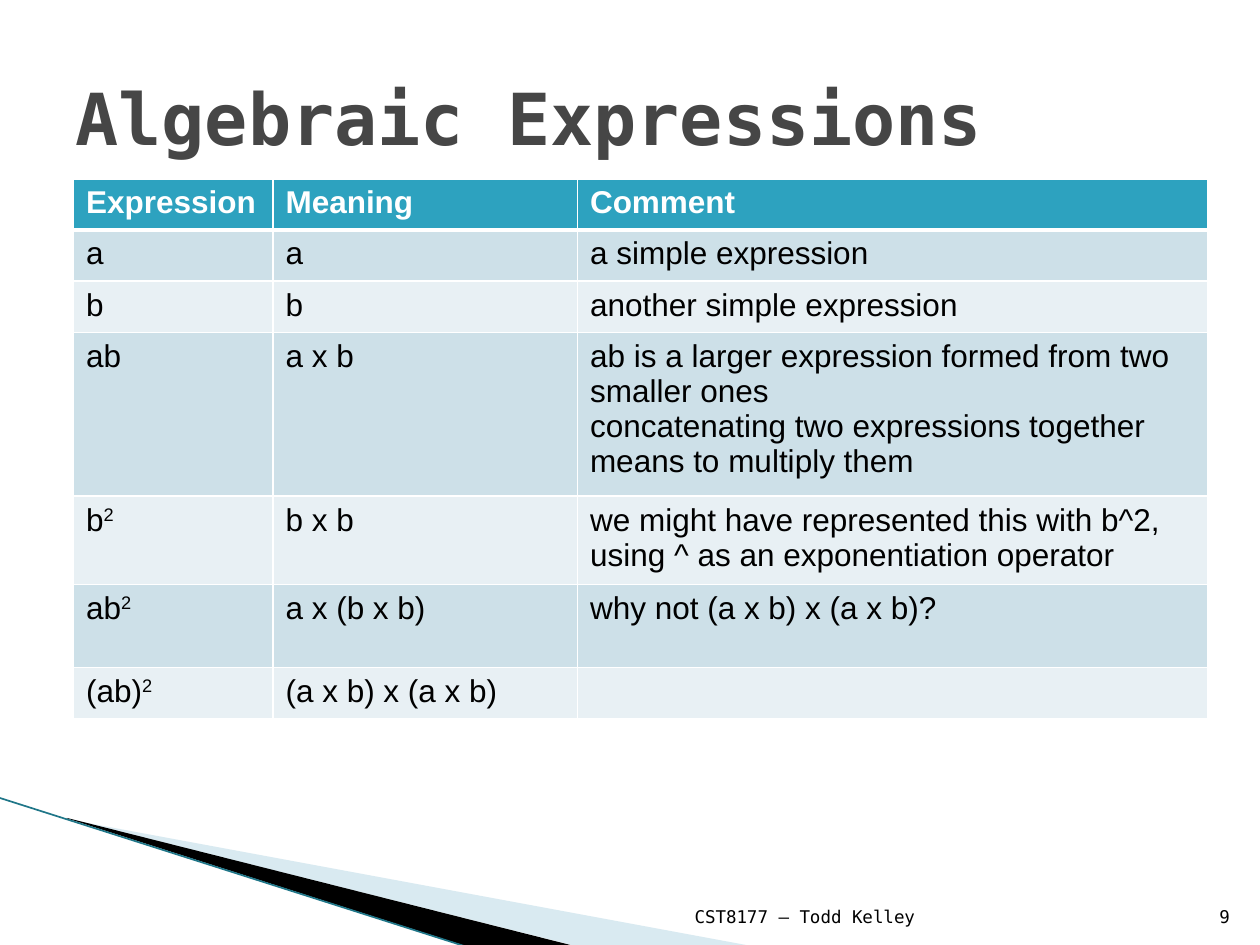
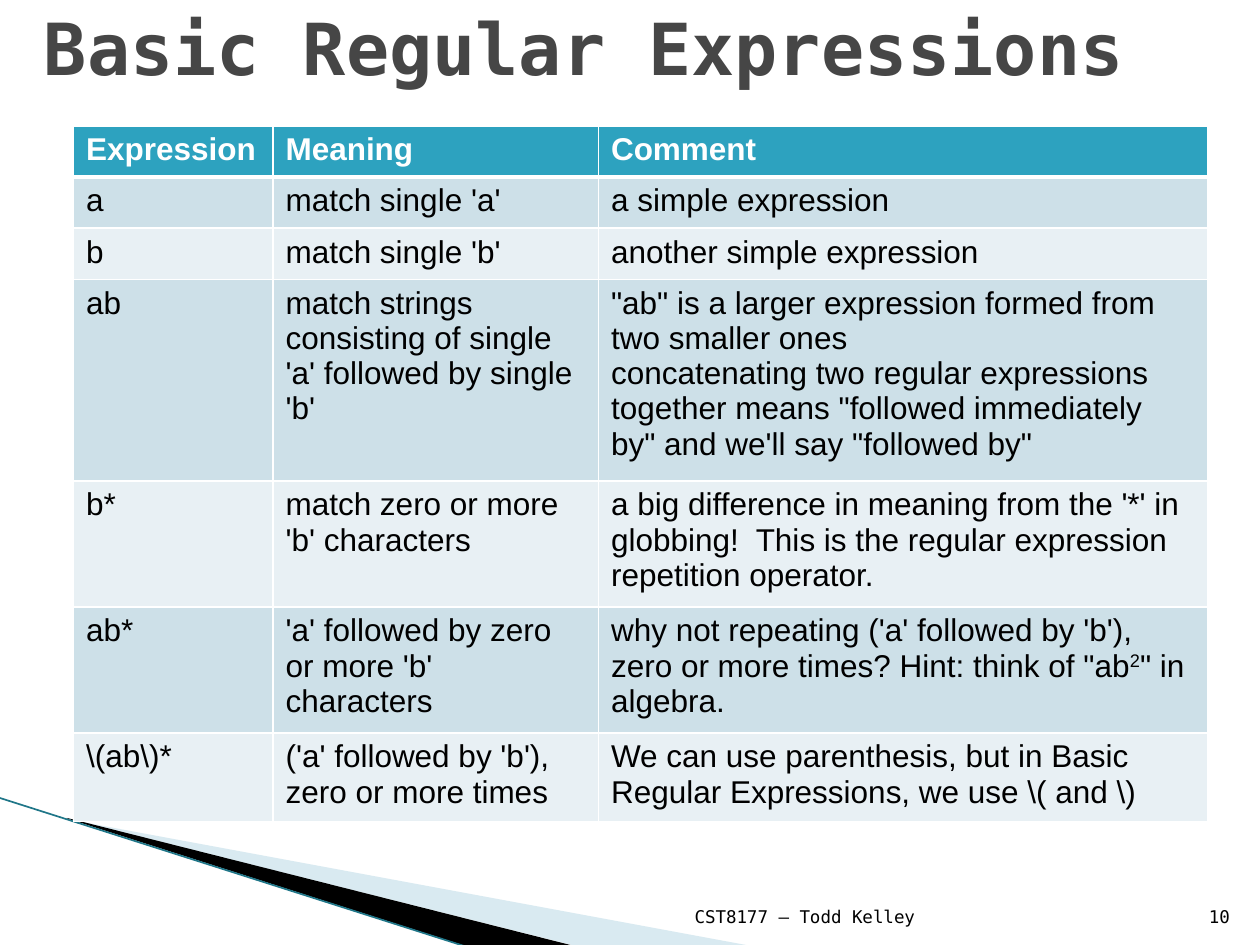
from pptx import Presentation
from pptx.dml.color import RGBColor
from pptx.enum.shapes import MSO_CONNECTOR
from pptx.enum.text import MSO_ANCHOR, PP_ALIGN
from pptx.oxml.ns import qn
from pptx.util import Pt
from lxml.etree import SubElement

MONO, SANS = "DejaVu Sans Mono", "Arial"
WHITE, BLACK, GREY = "FFFFFF", "000000", "464646"
TEAL, BANDS = "2DA2BF", ("CDE0E8", "E8F0F4")
SKY, EDGE = "A0CBDC", "1F7688"
WEDGE = [(39.6, 468.4), (428.4, 540.4), (328.4, 540.4), (39.6, 468)]
SHADE = [(38.2, 467.4), (329, 540.8), (268, 541.2), (38.6, 467.8)]
HEAD = ["Expression", "Meaning", "Comment"]

ALGEBRA = [
    (1, "a", "a", "a simple expression"),
    (1, "b", "b", "another simple expression"),
    (4, "ab", "a x b", "ab is a larger expression formed from two smaller ones\n"
     "concatenating two expressions together means to multiply them"),
    (2, "b~2~", "b x b", "we might have represented this with b^2, "
     "using ^ as an exponentiation operator"),
    (2, "ab~2~", "a x (b x b)", "why not (a x b) x (a x b)?"),
    (1, "(ab)~2~", "(a x b) x (a x b)", ""),
]
REGEX = [
    (1, "a", "match single 'a'", "a simple expression"),
    (1, "b", "match single 'b'", "another simple expression"),
    (5, "ab", "match strings consisting of single 'a' followed by single 'b'",
     "\"ab\" is a larger expression formed from two smaller ones\n"
     "concatenating two regular expressions together means "
     "\"followed immediately by\" and we'll say \"followed by\""),
    (3, "b*", "match zero or more 'b' characters",
     "a big difference in meaning from the '*' in globbing!  "
     "This is the regular expression repetition operator."),
    (3, "ab*", "'a' followed by zero or more 'b' characters",
     "why not repeating ('a' followed by 'b'), zero or more times? "
     "Hint: think of \"ab~2~\" in algebra."),
    (2, r"\(ab\)*", "('a' followed by 'b'), zero or more times",
     r"We can use parenthesis, but in Basic Regular Expressions, we use \( and \)"),
]


def tint(code):
    """Turn a hex string into a colour."""
    return RGBColor.from_string(code)


class Deck:
    """Hold the deck style and the current slide."""

    def __init__(self):
        """Start an empty deck of 10 by 7.5 inches."""
        self.prs = Presentation()
        self.prs.slide_width, self.prs.slide_height = Pt(720), Pt(540)

    def page(self, num):
        """Add a slide with its corner wedge and footer."""
        self.slide = self.prs.slides.add_slide(self.prs.slide_layouts[6])
        self.shapes = self.slide.shapes
        self.free(WEDGE, SKY, 40)
        self.free(SHADE, BLACK)
        self.line((-0.7, 455.8), (267.8, 541.4), EDGE, 0.95)
        self.foot("CST8177 – Todd Kelley", 344.9, 185)
        self.foot(str(num), 681.1, 28.8)

    def free(self, dots, code, alpha=100):
        """Draw a filled outline through the given points."""
        (left, top), *rest = [(Pt(x), Pt(y)) for x, y in dots]
        form = self.shapes.build_freeform(left, top)
        form.add_line_segments(rest)
        shape = form.convert_to_shape()
        shape.shadow.inherit = False
        shape.fill.solid()
        shape.fill.fore_color.rgb = tint(code)
        shape.line.fill.background()
        if alpha < 100:
            hue = shape._element.spPr.find(".//" + qn("a:srgbClr"))
            SubElement(hue, qn("a:alpha")).set("val", str(alpha * 1000))

    def line(self, start, end, code, width):
        """Draw a straight line."""
        ends = [Pt(v) for v in start + end]
        link = self.shapes.add_connector(MSO_CONNECTOR.STRAIGHT, *ends)
        link.line.color.rgb = tint(code)
        link.line.width = Pt(width)
        SubElement(link._element.spPr, qn("a:effectLst"))

    def text(self, frame, words, font, size, code, bold=False, side=PP_ALIGN.LEFT):
        """Fill a frame run by run, raising the parts between tildes."""
        for i, part in enumerate(words.split("\n")):
            para = frame.add_paragraph() if i else frame.paragraphs[0]
            para.alignment = side
            para.font.name, para.font.size = font, Pt(size)
            for j, piece in enumerate(part.split("~")):
                if not piece:
                    continue
                run = para.add_run()
                run.text = piece
                run.font.name, run.font.size = font, Pt(size)
                run.font.bold = bold
                run.font.color.rgb = tint(code)
                if j % 2:
                    run._r.get_or_add_rPr().set("baseline", "30000")

    def box(self, spot, words, anchor, *style):
        """Add a wrapped text box."""
        frame = self.shapes.add_textbox(*[Pt(v) for v in spot]).text_frame
        frame.word_wrap = True
        frame.vertical_anchor = anchor
        self.text(frame, words, *style)

    def title(self, words, left, top):
        """Add the slide title."""
        self.box((left, top, 648, 90), words, MSO_ANCHOR.MIDDLE, MONO, 41, GREY, True)

    def foot(self, words, left, width):
        """Add one part of the footer."""
        self.box((left, 504.7, width, 28.8), words, MSO_ANCHOR.BOTTOM,
                 MONO, 10, BLACK, False, PP_ALIGN.RIGHT)

    def edge(self, cell, row):
        """Rule a cell in white, thicker below the header."""
        props = cell._tc.get_or_add_tcPr()
        thick = {"T": 3 if row == 1 else 1, "B": 3 if row == 0 else 1}
        for side in "LRTB":
            rule = SubElement(props, qn("a:ln" + side), w=str(Pt(thick.get(side, 1))))
            fill = SubElement(rule, qn("a:solidFill"))
            SubElement(fill, qn("a:srgbClr"), val=WHITE)

    def table(self, top, cols, body):
        """Add a banded table whose rows fit their line counts."""
        rows = [(1, *HEAD)] + body
        tall = [max(29.2, 7.2 + 20.1 * row[0]) for row in rows]
        grid = self.shapes.add_table(len(rows), len(cols), Pt(42), Pt(top),
                                     Pt(sum(cols)), Pt(sum(tall))).table
        for col, width in zip(grid.columns, cols):
            col.width = Pt(width)
        for i, (_, *cells) in enumerate(rows):
            grid.rows[i].height = Pt(tall[i])
            for j, words in enumerate(cells):
                cell = grid.cell(i, j)
                self.edge(cell, i)
                cell.fill.solid()
                cell.fill.fore_color.rgb = tint(BANDS[(i - 1) % 2] if i else TEAL)
                self.text(cell.text_frame, words, SANS, 18,
                          BLACK if i else WHITE, i == 0)


def main():
    """Build and save both slides."""
    deck = Deck()
    deck.page(9)
    deck.table(102.3, (114, 174, 360), ALGEBRA)
    deck.title("Algebraic Expressions", 36, 21.6)
    deck.page(10)
    deck.table(72, (114, 186, 348), REGEX)
    deck.title("Basic Regular Expressions", 18, -18)
    deck.prs.save("out.pptx")


if __name__ == "__main__":
    main()
